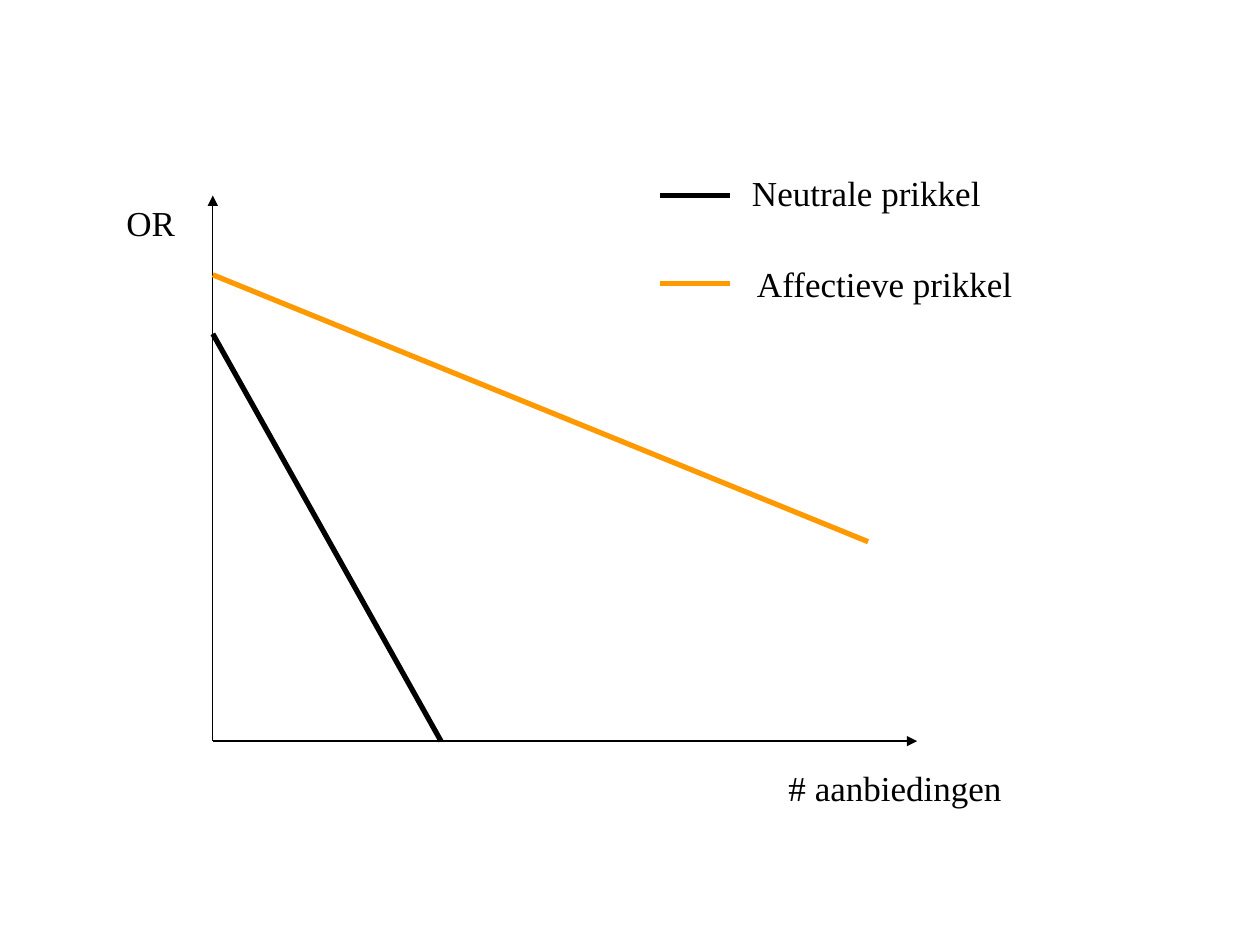
from lxml.etree import SubElement
from pptx import Presentation
from pptx.dml.color import RGBColor
from pptx.enum.shapes import MSO_CONNECTOR
from pptx.enum.text import PP_ALIGN
from pptx.oxml.ns import qn
from pptx.util import Cm, Pt

COLORS = {"neutral": "000000", "affective": "FF9900", "axis": "000000", "text": "000000"}
FONT = "Times New Roman"
ORIGIN = (4.29, 14.94)
AXIS_TOP = 3.94
AXIS_RIGHT = 18.49
LEGEND_LEFT, LEGEND_RIGHT = 13.31, 14.71


def add_line(slide, start, end, color, width=3, arrow=False):
    points = [Cm(value) for value in (*start, *end)]
    connector = slide.shapes.add_connector(MSO_CONNECTOR.STRAIGHT, *points)
    connector.line.color.rgb = RGBColor.from_string(COLORS[color])
    connector.line.width = Pt(width)
    if arrow:
        SubElement(connector.line._get_or_add_ln(), qn("a:tailEnd"), type="triangle")
    SubElement(connector._element.spPr, qn("a:effectLst"))


def add_text(slide, text, left, top, width, height=1.09, size=20,
             align=PP_ALIGN.CENTER, wrap=False):
    shape = slide.shapes.add_textbox(Cm(left), Cm(top), Cm(width), Cm(height))
    shape.text_frame.word_wrap = wrap
    paragraph = shape.text_frame.paragraphs[0]
    paragraph.alignment = align
    run = paragraph.add_run()
    run.text = text
    run.font.name = FONT
    run.font.size = Pt(size)
    run.font.color.rgb = RGBColor.from_string(COLORS["text"])


def add_axes(slide):
    for end in ((ORIGIN[0], AXIS_TOP), (AXIS_RIGHT, ORIGIN[1])):
        add_line(slide, ORIGIN, end, "axis", width=0.75, arrow=True)
    add_text(slide, "OR", 2.29, 3.94, 1.5)
    add_text(slide, "# aanbiedingen", 14.5, 15.32, 7.09)


def add_curves(slide):
    add_line(slide, (ORIGIN[0], 6.73), (8.89, ORIGIN[1]), "neutral")
    add_line(slide, (ORIGIN[0], 5.54), (17.5, 10.92), "affective")


def add_legend(slide):
    for color, top in (("neutral", 3.94), ("affective", 5.72)):
        add_line(slide, (LEGEND_LEFT, top), (LEGEND_RIGHT, top), color)
    add_text(slide, "Neutrale prikkel", 14.91, 3.33, 6.68, align=PP_ALIGN.LEFT, wrap=True)
    add_text(slide, "Affectieve prikkel", 14.99, 5.16, 5.69, height=1.12)


def main():
    presentation = Presentation()
    presentation.slide_width = Cm(25.4)
    presentation.slide_height = Cm(19.05)
    slide = presentation.slides.add_slide(presentation.slide_layouts[6])
    add_axes(slide)
    add_curves(slide)
    add_legend(slide)
    presentation.save("out.pptx")


if __name__ == "__main__":
    main()
